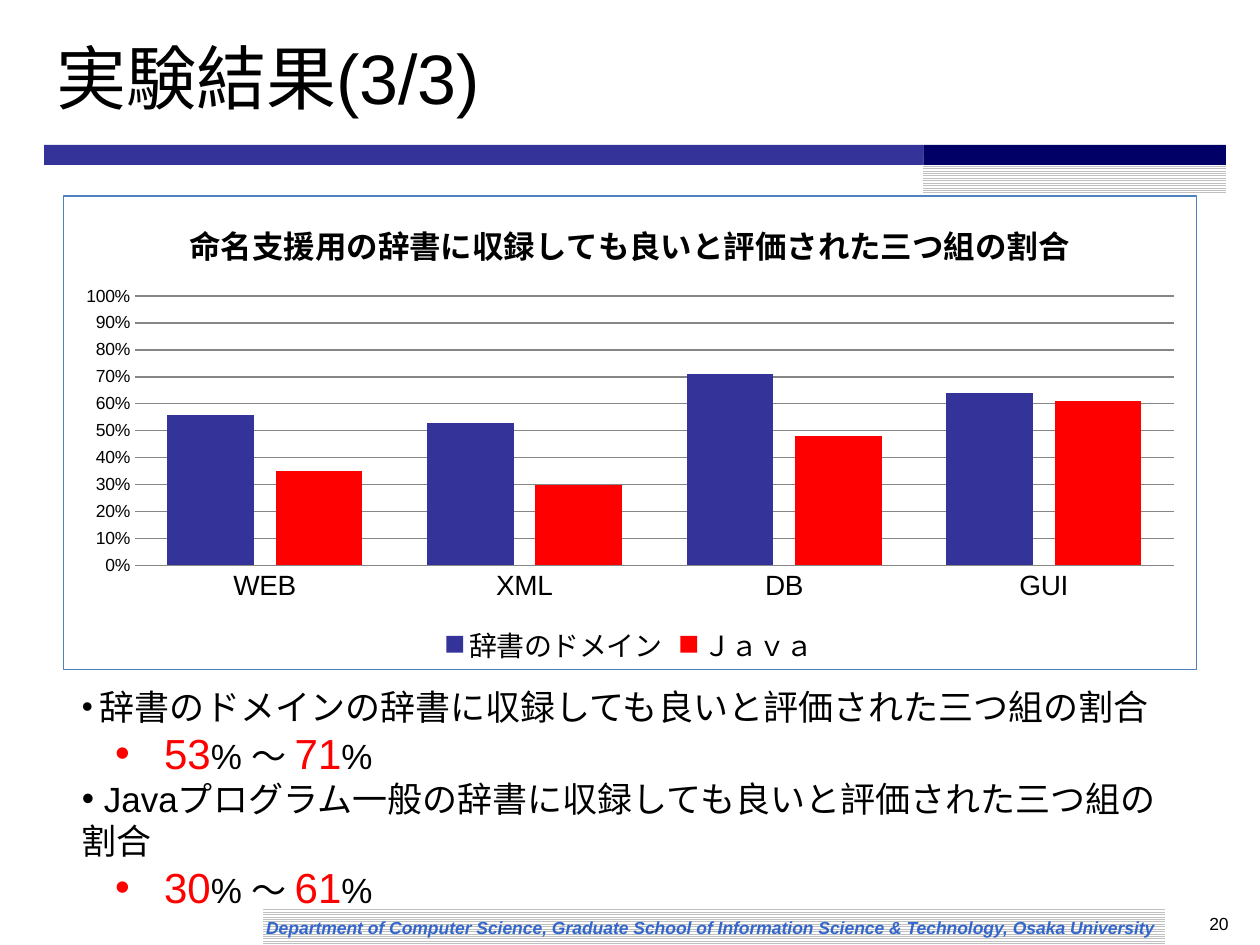
from lxml import etree
from pptx import Presentation
from pptx.chart.data import CategoryChartData
from pptx.dml.color import RGBColor
from pptx.enum.chart import XL_CHART_TYPE, XL_LEGEND_POSITION, XL_TICK_MARK
from pptx.enum.dml import MSO_PATTERN
from pptx.enum.shapes import MSO_SHAPE
from pptx.enum.text import MSO_ANCHOR, MSO_AUTO_SIZE, PP_ALIGN
from pptx.oxml import parse_xml
from pptx.oxml.ns import qn
from pptx.util import Pt

COLORS = {
    "black": "000000", "white": "FFFFFF", "stripe": "C0C0C0", "blue": "333399",
    "navy": "000066", "red": "FF0000", "footer": "3366CC", "grid": "868686",
    "frame": "4F81BD",
}
DRAWING = "http://schemas.openxmlformats.org/drawingml/2006/main"
CHART = "http://schemas.openxmlformats.org/drawingml/2006/chart"


def color(name):
    return RGBColor.from_string(COLORS[name])


def set_font(font, ink="black", **formats):
    font.color.rgb = color(ink)
    for key, value in {"name": "Arial", **formats}.items():
        setattr(font, key, value)


def place(shape, box):
    for key, value in zip(("left", "top", "width", "height"), box):
        setattr(shape, key, Pt(value))


def add_span(para, text, size, ink="black", **formats):
    span = para.add_run()
    span.text = text
    set_font(span.font, ink, size=Pt(size), **formats)


def add_bar(page, box, fill, striped=False):
    bar = page.shapes.add_shape(MSO_SHAPE.RECTANGLE, *map(Pt, box))
    bar.shadow.inherit = False
    bar.line.fill.background()
    if striped:
        bar.fill.patterned()
        bar.fill.pattern = MSO_PATTERN.LIGHT_HORIZONTAL
        bar.fill.fore_color.rgb = color(fill)
        bar.fill.back_color.rgb = color("white")
    else:
        bar.fill.solid()
        bar.fill.fore_color.rgb = color(fill)


def add_header(page, box):
    left, top, width, height = box
    split = 502.5
    accent = width - split
    place(page.shapes.title, (left, 9.4, width, 68.4))
    frame = page.shapes.title.text_frame
    frame.vertical_anchor = MSO_ANCHOR.MIDDLE
    frame.auto_size = MSO_AUTO_SIZE.NONE
    para = frame.paragraphs[0]
    para.alignment = PP_ALIGN.LEFT
    add_span(para, "実験結果(3/3)", 40)
    add_bar(page, (left, top, split, height), "blue")
    add_bar(page, (left + split, top + 6.5, accent, 21.6), "stripe", True)
    add_bar(page, (left + split, top, accent, height), "navy")


def add_label(page, box, text, align, anchor, **formats):
    label = page.shapes.add_textbox(*map(Pt, box))
    frame = label.text_frame
    frame.word_wrap = True
    frame.vertical_anchor = anchor
    para = frame.paragraphs[0]
    para.alignment = align
    add_span(para, text, 10, **formats)


def add_footer(page, box):
    left, top, width, height = box
    add_bar(page, (left, top, width, height), "stripe", True)
    add_label(page, (left - 5.5, top + 2.2, width + 11.5, 19.4),
              "Department of Computer Science, Graduate School of Information "
              "Science & Technology, Osaka University",
              PP_ALIGN.LEFT, MSO_ANCHOR.MIDDLE, ink="footer", bold=True, italic=True)
    add_label(page, (left + width, top, 43.2, height), "20",
              PP_ALIGN.RIGHT, MSO_ANCHOR.TOP)


def add_chart_frame(chart):
    frame = parse_xml(
        f'<c:spPr xmlns:c="{CHART}" xmlns:a="{DRAWING}"><a:noFill/>'
        f'<a:ln w="{Pt(0.75)}"><a:solidFill><a:srgbClr val="{COLORS["frame"]}"/>'
        '</a:solidFill></a:ln></c:spPr>')
    chart.element.find(qn("c:chart")).addnext(frame)


def add_rate_chart(page, box):
    data = CategoryChartData(number_format="0%")
    data.categories = ["WEB", "XML", "DB", "GUI"]
    data.add_series("辞書のドメイン", (0.56, 0.53, 0.71, 0.64))
    data.add_series("Ｊａｖａ", (0.35, 0.3, 0.48, 0.61))
    chart = page.shapes.add_chart(
        XL_CHART_TYPE.COLUMN_CLUSTERED, *map(Pt, box), data).chart
    set_font(chart.font, size=Pt(10))
    add_chart_frame(chart)

    para = chart.chart_title.text_frame.paragraphs[0]
    add_span(para, "命名支援用の辞書に収録しても良いと評価された三つ組の割合", 18, bold=True)
    chart.has_legend = True
    chart.legend.position = XL_LEGEND_POSITION.BOTTOM
    chart.legend.include_in_layout = False
    set_font(chart.legend.font, size=Pt(16))

    rates, domains = chart.value_axis, chart.category_axis
    formats = {"minimum_scale": 0, "maximum_scale": 1, "major_unit": 0.1,
               "has_major_gridlines": True}
    for key, value in formats.items():
        setattr(rates, key, value)
    for axis in (rates, domains):
        axis.major_tick_mark = XL_TICK_MARK.NONE
    rates.tick_labels.number_format = "0%"
    rates.tick_labels.number_format_is_linked = False
    rates.format.line.fill.background()
    for line in (rates.major_gridlines.format.line, domains.format.line):
        line.color.rgb = color("grid")
        line.width = Pt(0.75)
    set_font(domains.tick_labels.font, size=Pt(16))

    plot = chart.plots[0]
    plot.gap_width, plot.overlap, plot.vary_by_categories = 75, -25, False
    for series, fill in zip(plot.series, ("blue", "red")):
        series.format.fill.solid()
        series.format.fill.fore_color.rgb = color(fill)


def add_bullet(para, margin, indent):
    props = para._p.get_or_add_pPr()
    props.set("marL", str(Pt(margin)))
    props.set("indent", str(Pt(indent)))
    etree.SubElement(props, qn("a:buFont")).set("typeface", "Arial")
    etree.SubElement(props, qn("a:buChar")).set("char", "•")
    para.space_before = Pt(0)


def add_findings(page, box):
    body = page.placeholders[1]
    place(body, box)
    frame = body.text_frame
    frame.word_wrap = True
    frame.auto_size = MSO_AUTO_SIZE.NONE
    findings = [
        ("辞書のドメインの辞書に収録しても良いと評価された三つ組の割合", 18, "53", "71"),
        ("Javaプログラム一般の辞書に収録しても良いと評価された三つ組の割合", 20, "30", "61"),
    ]
    para = frame.paragraphs[0]
    for index, (text, gap_size, low, high) in enumerate(findings):
        if index:
            para = frame.add_paragraph()
        add_bullet(para, 0, 0)
        add_span(para, " ", gap_size)
        add_span(para, text, 20)
        para = frame.add_paragraph()
        para.level = 1
        add_bullet(para, 47, -28)
        for value, unit in ((low, "% ～ "), (high, "%")):
            add_span(para, value, 24, "red")
            add_span(para, unit, 20)


def main():
    deck = Presentation()
    deck.slide_width, deck.slide_height = Pt(720), Pt(540)
    page = deck.slides.add_slide(deck.slide_layouts[1])
    add_header(page, (25.2, 82.8, 675.3, 11.5))
    add_footer(page, (150.5, 518.4, 515.5, 21.6))
    add_rate_chart(page, (36, 111.6, 648, 271.4))
    add_findings(page, (39.6, 388.1, 640, 130))
    deck.save("out.pptx")


if __name__ == "__main__":
    main()
